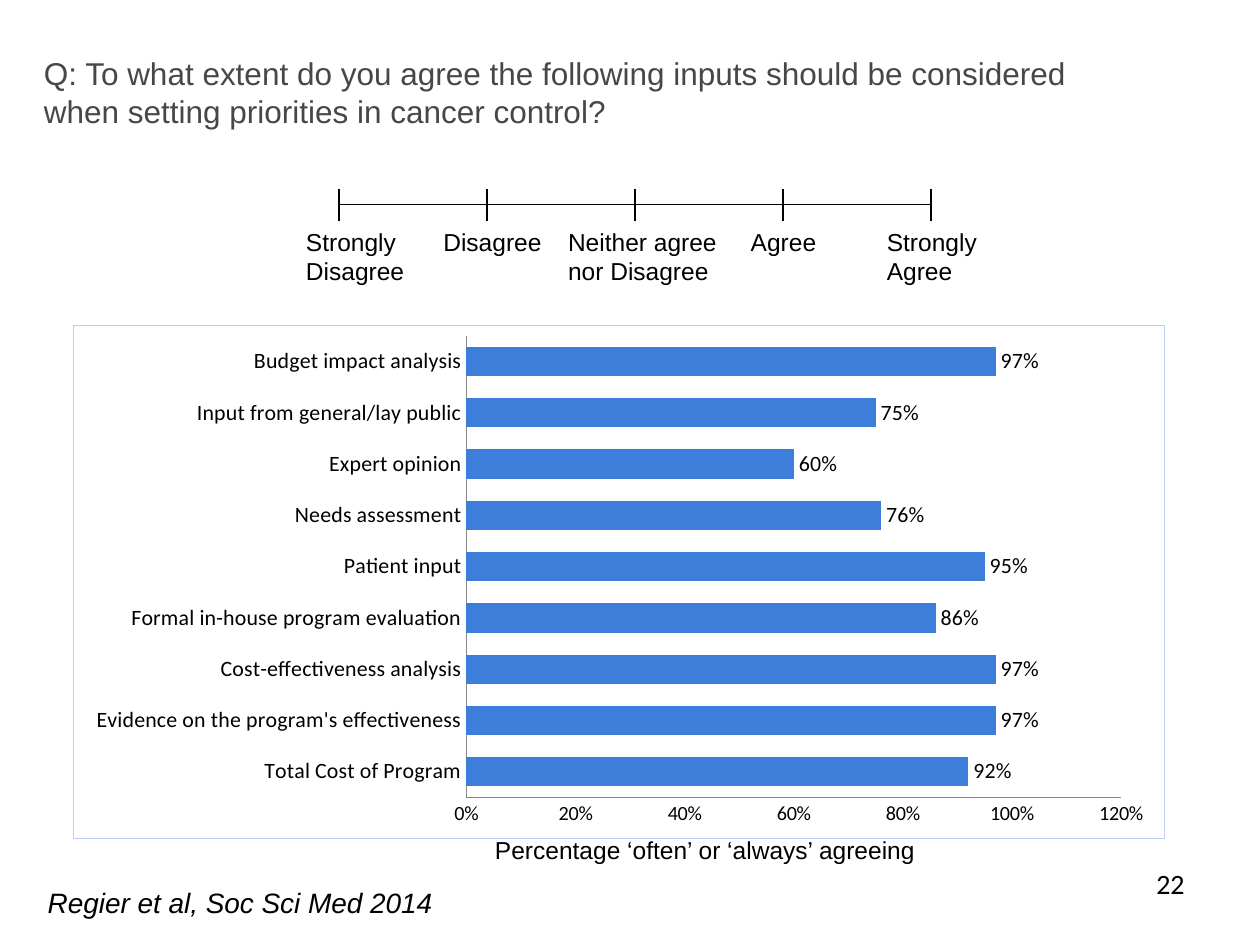
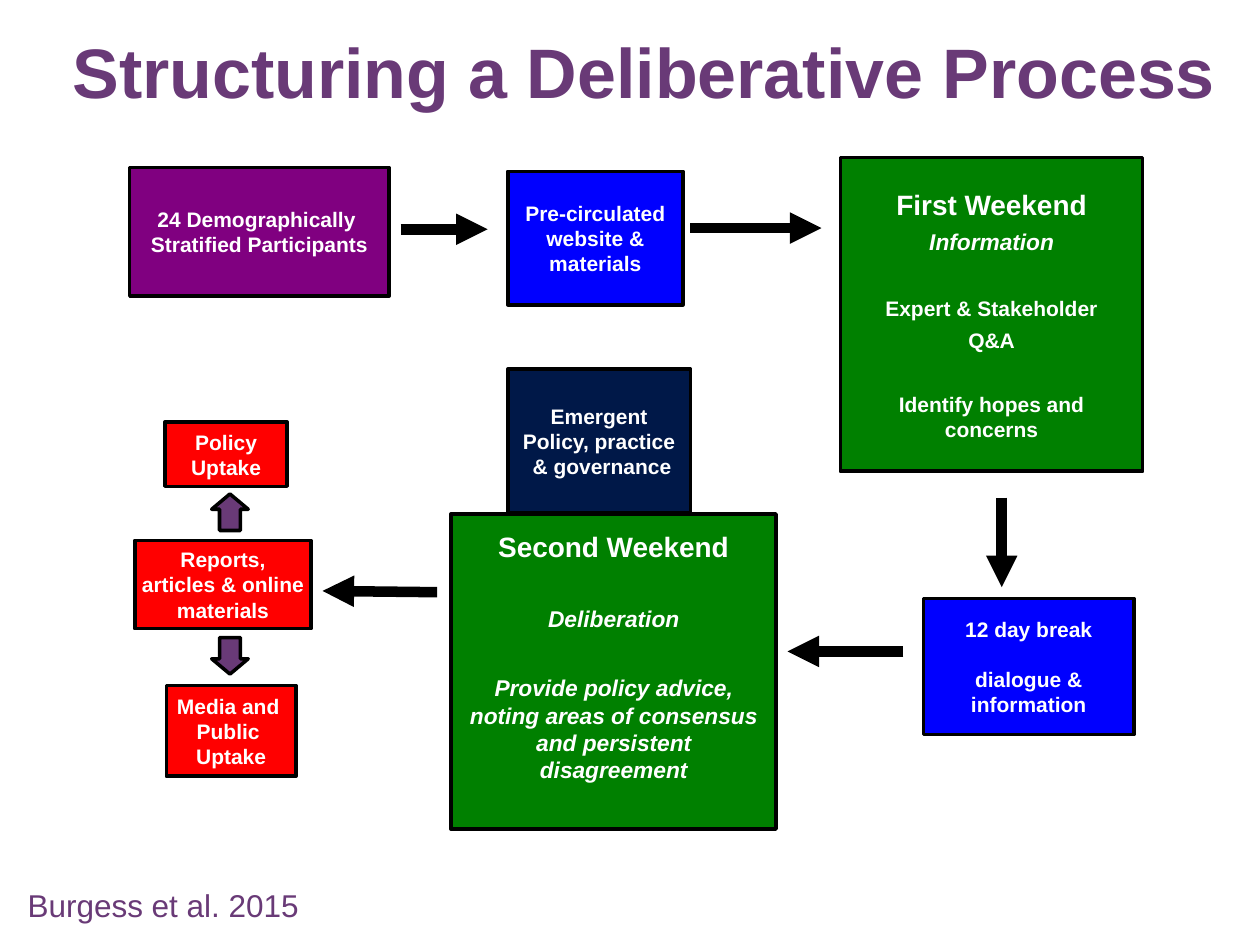
import dataclasses
import lxml.etree
import pptx
import pptx.chart.data
import pptx.dml.color
import pptx.enum.chart
import pptx.enum.shapes
import pptx.enum.text
import pptx.oxml
import pptx.oxml.ns
import pptx.util

COLUMNS, ROWS = 100, 75
SLIDE_WIDTH, SLIDE_HEIGHT = pptx.util.Inches(10), pptx.util.Inches(7.5)
BLACK, WHITE, PLUM, SLATE = "000000", "FFFFFF", "693A77", "474747"
PURPLE, BLUE, RED, GREEN, NAVY = "800080", "0000FF", "FF0000", "008000", "001848"
BAR, BORDER, AXIS = "3D7EDB", "BCCDFC", "878787"
LEFT = pptx.enum.text.PP_ALIGN.LEFT
CENTER = pptx.enum.text.PP_ALIGN.CENTER
RIGHT = pptx.enum.text.PP_ALIGN.RIGHT


@dataclasses.dataclass
class Box:
    left: float
    top: float
    width: float
    height: float

    def within(self, left, top, width, height):
        return Box(self.left + left, self.top + top, width, height)

    def lengths(self):
        return (across(self.left), down(self.top),
                across(self.width), down(self.height))


@dataclasses.dataclass
class Line:
    text: str
    size: float = 12
    italic: bool = False
    before: float = 0


def across(columns):
    return int(SLIDE_WIDTH * columns / COLUMNS)


def down(rows):
    return int(SLIDE_HEIGHT * rows / ROWS)


def color(value):
    return pptx.dml.color.RGBColor.from_string(value)


def write(frame, lines, ink, bold=False, align=LEFT, font="Arial"):
    for index, line in enumerate(lines):
        paragraph = frame.add_paragraph() if index else frame.paragraphs[0]
        paragraph.alignment = align
        paragraph.space_before = pptx.util.Pt(line.before)
        run = paragraph.add_run()
        run.text = line.text
        run.font.name = font
        run.font.size = pptx.util.Pt(line.size)
        run.font.bold = bold
        run.font.italic = line.italic
        run.font.color.rgb = color(ink)


def add_text(slide, box, lines, ink=BLACK, wrap=False, **style):
    frame = slide.shapes.add_textbox(*box.lengths()).text_frame
    frame.word_wrap = wrap
    write(frame, lines, ink, **style)


def add_line(slide, box, start, end, width=0.75, arrow=False):
    (x1, y1), (x2, y2) = start, end
    connector = slide.shapes.add_connector(
        pptx.enum.shapes.MSO_CONNECTOR.STRAIGHT,
        across(box.left + x1), down(box.top + y1),
        across(box.left + x2), down(box.top + y2))
    connector.line.color.rgb = color(BLACK)
    connector.line.width = pptx.util.Pt(width)
    properties = connector.element.spPr
    if arrow:
        lxml.etree.SubElement(properties.find(pptx.oxml.ns.qn("a:ln")),
                              pptx.oxml.ns.qn("a:tailEnd"), type="triangle")
    lxml.etree.SubElement(properties, pptx.oxml.ns.qn("a:effectLst"))


def add_block(slide, box, fill, kind=pptx.enum.shapes.MSO_SHAPE.RECTANGLE):
    shape = slide.shapes.add_shape(kind, *box.lengths())
    shape.shadow.inherit = False
    shape.fill.solid()
    shape.fill.fore_color.rgb = color(fill)
    shape.line.color.rgb = color(BLACK)
    shape.line.width = pptx.util.Pt(2)
    return shape


def add_step(slide, box, fill, lines, wrap=False, bottom=0.05):
    frame = add_block(slide, box, fill).text_frame
    frame.word_wrap = wrap
    frame.vertical_anchor = pptx.enum.text.MSO_ANCHOR.MIDDLE
    frame.margin_bottom = pptx.util.Inches(bottom)
    write(frame, lines, WHITE, bold=True, align=CENTER)


def add_agreement_scale(slide, box):
    labels = [
        (-3.6, 9.9, ["Strongly", "Disagree"]),
        (7.3, 9.9, ["Disagree"]),
        (17.2, 13.9, ["Neither agree", "nor Disagree"]),
        (31.7, 7.2, ["Agree"]),
        (42.5, 9.8, ["Strongly", "Agree"]),
    ]
    step = box.width / (len(labels) - 1)
    middle = box.height / 2
    for index, (left, width, words) in enumerate(labels):
        x = index * step
        add_line(slide, box, (x, 0), (x, box.height))
        if index:
            add_line(slide, box, (x - step, middle), (x, middle))
        label_box = box.within(left, box.height, width, 1.1 + 2.3 * len(words))
        add_text(slide, label_box, [Line(word, 14) for word in words])


def style_axis(axis, size):
    axis.has_major_gridlines = False
    axis.major_tick_mark = pptx.enum.chart.XL_TICK_MARK.NONE
    axis.minor_tick_mark = pptx.enum.chart.XL_TICK_MARK.NONE
    axis.tick_labels.font.size = pptx.util.Pt(size)
    axis.format.line.color.rgb = color(AXIS)
    axis.format.line.width = pptx.util.Pt(0.75)


def frame_chart(chart):
    namespaces = pptx.oxml.ns.nsdecls("c", "a")
    border = pptx.oxml.parse_xml(
        f'<c:spPr {namespaces}><a:noFill/><a:ln w="9525"><a:solidFill>'
        f'<a:srgbClr val="{BORDER}"/></a:solidFill></a:ln></c:spPr>')
    chart.element.find(pptx.oxml.ns.qn("c:chart")).addnext(border)
    shares = {"x": 0.36, "y": 0.02, "w": 0.6, "h": 0.9}
    modes = "".join(f'<c:{side}Mode val="edge"/>' for side in "xy")
    values = "".join(f'<c:{side} val="{share}"/>' for side, share in shares.items())
    layout = pptx.oxml.parse_xml(
        f'<c:layout {namespaces}><c:manualLayout><c:layoutTarget val="inner"/>'
        f'{modes}{values}</c:manualLayout></c:layout>')
    plot_area = chart.element.find(".//" + pptx.oxml.ns.qn("c:plotArea"))
    automatic = plot_area.find(pptx.oxml.ns.qn("c:layout"))
    if automatic is not None:
        plot_area.remove(automatic)
    plot_area.insert(0, layout)


def add_inputs_chart(slide, box):
    agreement = {
        "Total Cost of Program": 0.92,
        "Evidence on the program's effectiveness": 0.97,
        "Cost-effectiveness analysis": 0.97,
        "Formal in-house program evaluation": 0.86,
        "Patient input": 0.95,
        "Needs assessment": 0.76,
        "Expert opinion": 0.6,
        "Input from general/lay public": 0.75,
        "Budget impact analysis": 0.97,
    }
    data = pptx.chart.data.CategoryChartData(number_format="0%")
    data.categories = list(agreement)
    data.add_series("Series 1", list(agreement.values()))
    chart = slide.shapes.add_chart(pptx.enum.chart.XL_CHART_TYPE.BAR_CLUSTERED,
                                   *box.lengths(), data).chart
    chart.has_legend = False
    chart.has_title = False
    chart.font.name = "Calibri"
    chart.font.size = pptx.util.Pt(11.5)
    chart.font.color.rgb = color(BLACK)
    style_axis(chart.category_axis, 12.5)
    style_axis(chart.value_axis, 11.5)
    chart.value_axis.minimum_scale = 0
    chart.value_axis.maximum_scale = 1.2
    chart.value_axis.major_unit = 0.2
    chart.value_axis.tick_labels.number_format = "0%"
    chart.value_axis.tick_labels.number_format_is_linked = False
    plot = chart.plots[0]
    plot.gap_width = 75
    plot.vary_by_categories = False
    bars = plot.series[0].format.fill
    bars.solid()
    bars.fore_color.rgb = color(BAR)
    plot.has_data_labels = True
    labels = plot.data_labels
    labels.show_value = True
    labels.number_format = "0%"
    labels.number_format_is_linked = False
    labels.position = pptx.enum.chart.XL_LABEL_POSITION.OUTSIDE_END
    labels.font.size = pptx.util.Pt(12.5)
    frame_chart(chart)
    add_text(slide, box.within(32.5, 40, 35.5, 3.4),
             [Line("Percentage ‘often’ or ‘always’ agreeing", 14)])


def add_process(slide, box):
    steps = [
        ((0.3, 0.8, 20.6, 10.2), PURPLE,
         ["24 Demographically ", "Stratified Participants"]),
        ((30.3, 1.1, 13.9, 10.6), BLUE, ["Pre-circulated", "website &", "materials"]),
        ((30.3, 16.8, 14.5, 11.4), NAVY,
         ["Emergent", "Policy, practice", " & governance"]),
        ((3.1, 21, 9.7, 5.1), RED, ["Policy", "Uptake"]),
        ((0.7, 30.4, 14, 7), RED, ["Reports,", "articles & online", "materials"]),
        ((3.2, 41.9, 10.3, 7.2), RED, ["Media and ", "Public ", "Uptake"]),
    ]
    for place, fill, words in steps:
        add_step(slide, box.within(*place), fill, [Line(word) for word in words])
    add_step(slide, box.within(63.3, 35, 16.7, 10.8), BLUE, [
        Line("12 day break"), Line("dialogue &", before=14), Line("information")])
    add_step(slide, box.within(56.7, 0, 24, 24.9), GREEN, [
        Line("First Weekend", 16),
        Line("Information", 13, True, 4),
        Line("Expert & Stakeholder", before=23),
        Line("Q&A", before=4),
        Line("Identify hopes and concerns", before=22)], wrap=True)
    add_step(slide, box.within(25.8, 28.3, 25.8, 25), GREEN, [
        Line("Second Weekend", 16),
        Line("Deliberation", 13, True, 24),
        Line("Provide policy advice, noting areas of consensus"
             " and persistent disagreement", 13, True, 24)], wrap=True, bottom=0.29)

    arrows = [
        ((21.8, 5.7), (28.7, 5.7)),
        ((44.8, 5.6), (55.2, 5.6)),
        ((69.5, 27), (69.5, 34.1)),
        ((61.7, 39.2), (52.5, 39.2)),
        ((24.7, 34.5), (15.6, 34.4)),
    ]
    for start, end in arrows:
        add_line(slide, box, start, end, width=6, arrow=True)
    for top, rotation in ((26.7, 0), (38.1, 180)):
        arrow = add_block(slide, box.within(6.8, top, 2.9, 2.9), PLUM,
                          pptx.enum.shapes.MSO_SHAPE.UP_ARROW)
        arrow.adjustments[0] = 0.57
        arrow.adjustments[1] = 0.42
        arrow.rotation = rotation


def add_blank_slide(presentation):
    slide = presentation.slides.add_slide(presentation.slide_layouts[6])
    slide.background.fill.solid()
    slide.background.fill.fore_color.rgb = color(WHITE)
    return slide


def build_survey_slide(presentation):
    slide = add_blank_slide(presentation)
    add_inputs_chart(slide, Box(5.8, 25.8, 86.7, 40.8))
    add_text(slide, Box(2.5, 3.8, 83.2, 7.1), [
        Line("Q: To what extent do you agree the following inputs should be considered", 18),
        Line("when setting priorities in cancer control?", 18)], SLATE)
    add_agreement_scale(slide, Box(26.9, 15, 47, 2.5))
    add_text(slide, Box(71.7, 68.3, 23.3, 5.2), [Line("22", 16)],
             wrap=True, align=RIGHT, font="Calibri")
    add_text(slide, Box(2.8, 69.8, 32.9, 3.7),
             [Line("Regier et al, Soc Sci Med 2014", 16, True)])


def build_process_slide(presentation):
    slide = add_blank_slide(presentation)
    add_process(slide, Box(10, 12.5, 80.7, 53.3))
    add_text(slide, Box(2.2, 1.8, 97.8, 10.5),
             [Line("Structuring a Deliberative Process", 40)], PLUM,
             wrap=True, bold=True, align=CENTER)
    add_text(slide, Box(1.2, 69.8, 29.1, 4), [Line("Burgess et al. 2015", 18)],
             PLUM, wrap=True)


def main():
    presentation = pptx.Presentation()
    presentation.slide_width = SLIDE_WIDTH
    presentation.slide_height = SLIDE_HEIGHT
    build_survey_slide(presentation)
    build_process_slide(presentation)
    presentation.save("out.pptx")


if __name__ == "__main__":
    main()
